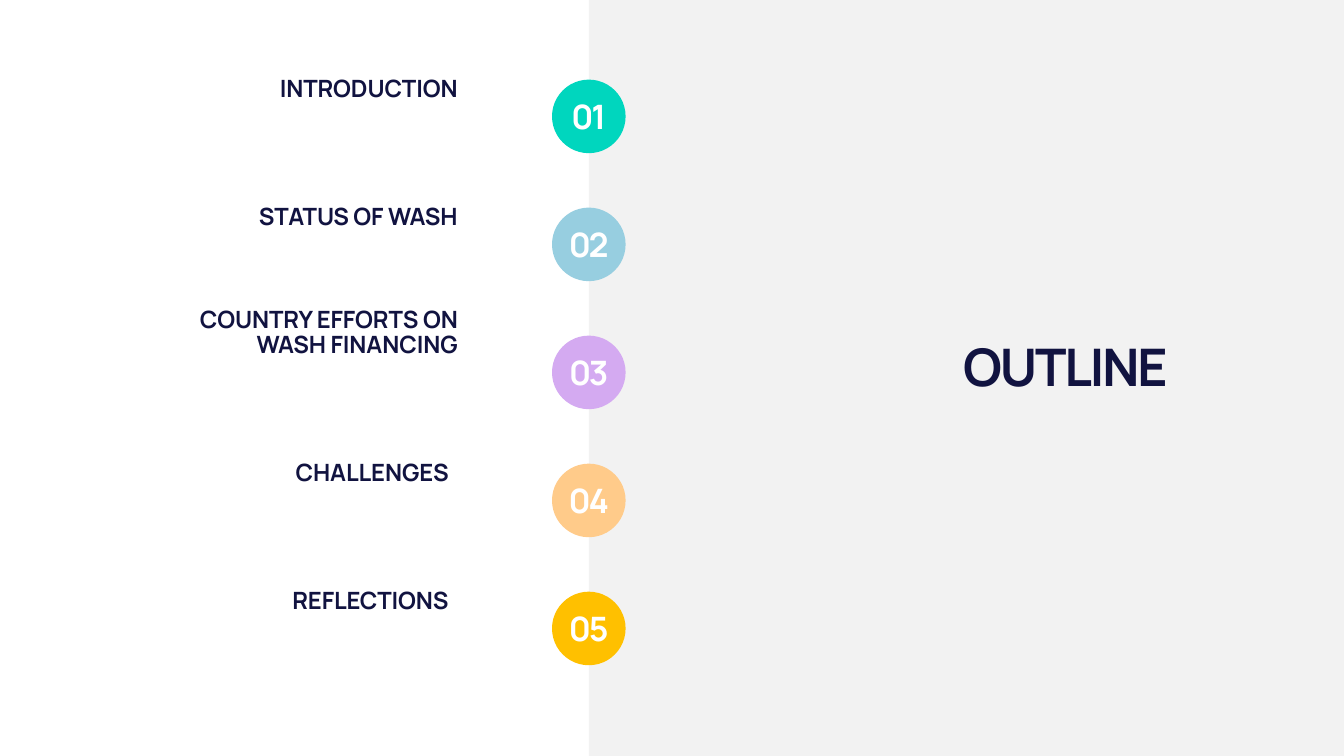
import pptx
import pptx.dml.color
import pptx.enum.shapes
import pptx.enum.text
import pptx.util

Inches, Pt = pptx.util.Inches, pptx.util.Pt
RGBColor = pptx.dml.color.RGBColor
MSO_SHAPE = pptx.enum.shapes.MSO_SHAPE
PP_ALIGN = pptx.enum.text.PP_ALIGN
MSO_ANCHOR = pptx.enum.text.MSO_ANCHOR

FONT = "Manrope"
NAVY = RGBColor(0x11, 0x13, 0x40)
WHITE = RGBColor(0xFF, 0xFF, 0xFF)
PANEL_GREY = RGBColor(0xF2, 0xF2, 0xF2)

TITLE = "OUTLINE"
# label, circle colour, label height, right inset
TOPICS = [
    ("INTRODUCTION", RGBColor(0x00, 0xD6, 0xBE), 0.36, 0.15),
    ("STATUS OF WASH", RGBColor(0x97, 0xCE, 0xE0), 0.36, 0.15),
    ("COUNTRY EFFORTS ON WASH FINANCING", RGBColor(0xD4, 0xAA, 0xF1), 0.61, 0.15),
    ("CHALLENGES", RGBColor(0xFF, 0xCB, 0x8A), 0.36, 0.24),
    ("REFLECTIONS", RGBColor(0xFF, 0xC0, 0x00), 0.36, 0.24),
]

SLIDE_W, SLIDE_H = 13.33, 7.5
PANEL_LEFT = 5.84
CIRCLE = 0.73
FIRST_TOP, PITCH = 0.79, 1.27
LABEL_LEFT, LABEL_W = 1.36, 3.33
LABEL_DROP = 0.27  # from circle top to label bottom


def add_filled(slide, kind, box, color):
    sp = slide.shapes.add_shape(kind, *map(Inches, box))
    sp.shadow.inherit = False
    sp.fill.solid()
    sp.fill.fore_color.rgb = color
    sp.line.fill.background()
    return sp


def write(sp, text, size, color, align, anchor, tracking, right=0.1, spacing=None):
    """Set one paragraph; tracking is in hundredths of a point."""
    tf = sp.text_frame
    tf.word_wrap = True
    tf.auto_size = pptx.enum.text.MSO_AUTO_SIZE.NONE
    tf.vertical_anchor = anchor
    tf.margin_left, tf.margin_right = Inches(0.1), Inches(right)
    tf.margin_top = tf.margin_bottom = Inches(0.05)
    p = tf.paragraphs[0]
    r = p.add_run()
    r.text = text
    r.font._element.set("spc", str(tracking))
    p.alignment = align
    p.font.name, p.font.size, p.font.bold = FONT, Pt(size), True
    p.font.color.rgb = color
    if spacing:
        p.line_spacing = Pt(spacing)
    return tf


def main():
    prs = pptx.Presentation()
    prs.slide_width, prs.slide_height = Inches(SLIDE_W), Inches(SLIDE_H)
    slide = prs.slides.add_slide(prs.slide_layouts[5])

    panel = add_filled(slide, MSO_SHAPE.RECTANGLE,
                       (PANEL_LEFT, 0, SLIDE_W - PANEL_LEFT, SLIDE_H), PANEL_GREY)
    title = slide.shapes.title
    title._element.addprevious(panel._element)
    title.left, title.top = Inches(8.2), Inches(3.25)
    title.width, title.height = Inches(3.59), Inches(0.74)
    write(title, TITLE, 37, NAVY, PP_ALIGN.RIGHT, MSO_ANCHOR.BOTTOM, -150,
          right=0.21, spacing=47)

    for i, (label, color, height, right) in enumerate(TOPICS):
        top = FIRST_TOP + i * PITCH
        circle = add_filled(slide, MSO_SHAPE.OVAL,
                            (PANEL_LEFT - CIRCLE / 2, top, CIRCLE, CIRCLE), color)
        tf = write(circle, f"{i + 1:02}", 24, WHITE, PP_ALIGN.CENTER,
                   MSO_ANCHOR.MIDDLE, -160)
        tf.margin_left = tf.margin_right = tf.margin_top = tf.margin_bottom = 0
        box = (LABEL_LEFT, top + LABEL_DROP - height, LABEL_W, height)
        sp = slide.shapes.add_textbox(*map(Inches, box))
        write(sp, label, 17, NAVY, PP_ALIGN.RIGHT, MSO_ANCHOR.BOTTOM, -10,
              right=right, spacing=17.5)

    prs.save("out.pptx")


if __name__ == "__main__":
    main()
